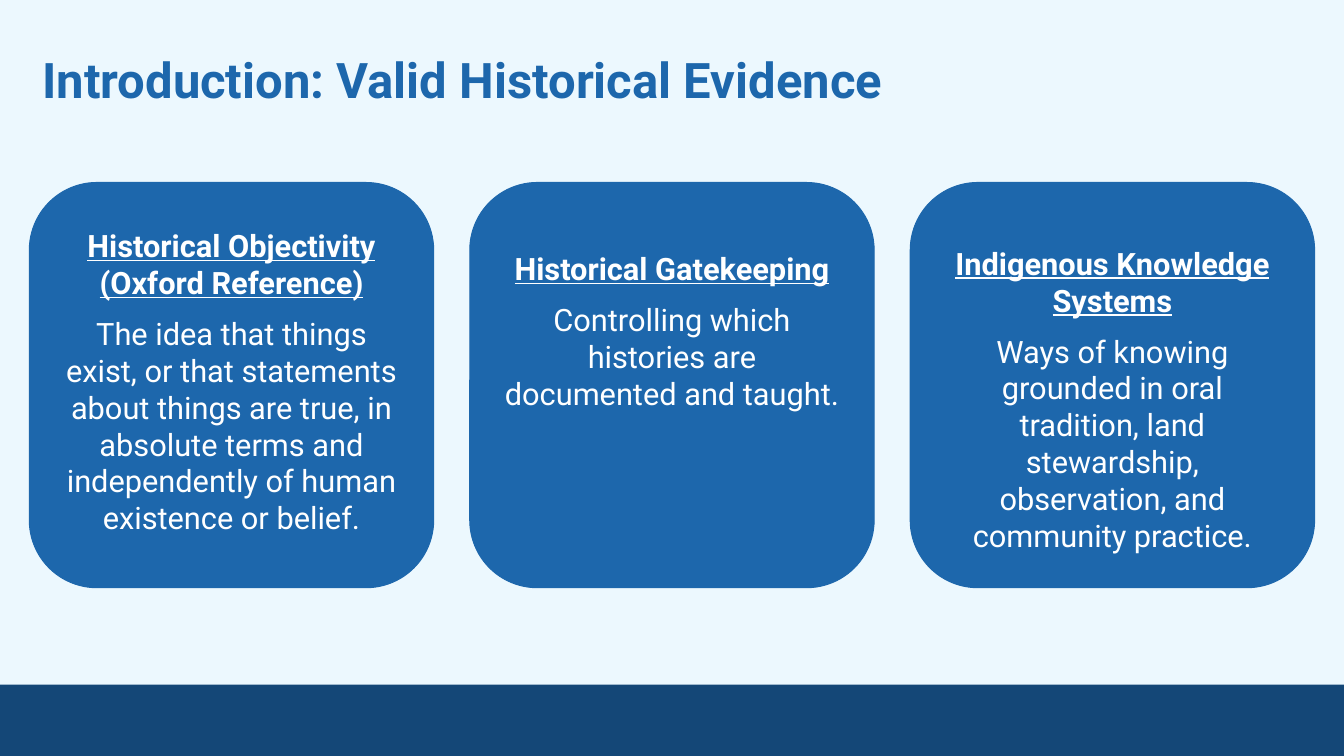
"""Build a slide that defines three terms about valid historical evidence."""
from pptx import Presentation
from pptx.dml.color import RGBColor
from pptx.enum.shapes import MSO_SHAPE
from pptx.enum.text import MSO_ANCHOR, PP_ALIGN
from pptx.util import Cm, Pt

RECTANGLE = MSO_SHAPE.RECTANGLE
ROUNDED = MSO_SHAPE.ROUNDED_RECTANGLE
TOP, MIDDLE = MSO_ANCHOR.TOP, MSO_ANCHOR.MIDDLE
LEFT, CENTER = PP_ALIGN.LEFT, PP_ALIGN.CENTER
BLUE, NAVY, PALE, WHITE = "1D67AC", "144777", "ECF8FE", "FFFFFF"
CARD_LEFT, CARD_TOP, CARD_WIDTH, CARD_HEIGHT, CARD_PITCH = 0.74, 4.6, 10.19, 10.21, 11.1
CARDS = [
    ("Historical Objectivity (Oxford Reference)",
     "The idea that things exist, or that statements about things are true, "
     "in absolute terms and independently of human existence or belief. ", 0.61),
    ("Historical Gatekeeping",
     "Controlling which histories are documented and taught.", 1.19),
    ("Indigenous Knowledge Systems",
     "Ways of knowing grounded in oral tradition, land stewardship, "
     "observation, and community practice.", 1.06),
]


def paint(color_format, hex_color):
    color_format.rgb = RGBColor.from_string(hex_color)


def write(para, text, size=22, color=WHITE, bold=False, underline=False, align=CENTER):
    para.alignment = align
    span = para.add_run()
    span.text = text
    span.font.name = "Roboto"
    span.font.size = Pt(size)
    span.font.bold = bold
    span.font.underline = underline
    paint(span.font.color, color)


deck = Presentation()
deck.slide_width, deck.slide_height = Cm(33.87), Cm(19.05)
page = deck.slides.add_slide(deck.slide_layouts[5])
page.background.fill.solid()
paint(page.background.fill.fore_color, PALE)

footer = page.shapes.add_shape(RECTANGLE, 0, Cm(17.25), deck.slide_width, Cm(1.8))
footer.shadow.inherit = False
footer.fill.solid()
paint(footer.fill.fore_color, NAVY)
footer.line.fill.background()

title = page.shapes.title
title.left, title.top, title.width, title.height = Cm(0.74), Cm(0.89), Cm(30.96), Cm(2.18)
frame = title.text_frame
frame.margin_left = frame.margin_right = frame.margin_top = frame.margin_bottom = Cm(0.33)
frame.vertical_anchor = MIDDLE
write(frame.paragraphs[0], "Introduction: Valid Historical Evidence",
      size=35, color=BLUE, bold=True, align=LEFT)

for index, (term, definition, top_margin) in enumerate(CARDS):
    card = page.shapes.add_shape(ROUNDED, Cm(CARD_LEFT + index * CARD_PITCH), Cm(CARD_TOP),
                                 Cm(CARD_WIDTH), Cm(CARD_HEIGHT))
    card.shadow.inherit = False
    card.adjustments[0] = 0.167
    card.fill.solid()
    paint(card.fill.fore_color, BLUE)
    paint(card.line.color, BLUE)
    card.line.width = Pt(0.75)
    frame = card.text_frame
    frame.word_wrap = True
    frame.vertical_anchor = TOP
    frame.margin_left = frame.margin_right = frame.margin_bottom = Cm(0.25)
    frame.margin_top = Cm(top_margin)
    write(frame.paragraphs[0], term, bold=True, underline=True)
    para = frame.add_paragraph()
    para.space_before = Pt(10)
    write(para, definition.strip())

deck.save("out.pptx")
